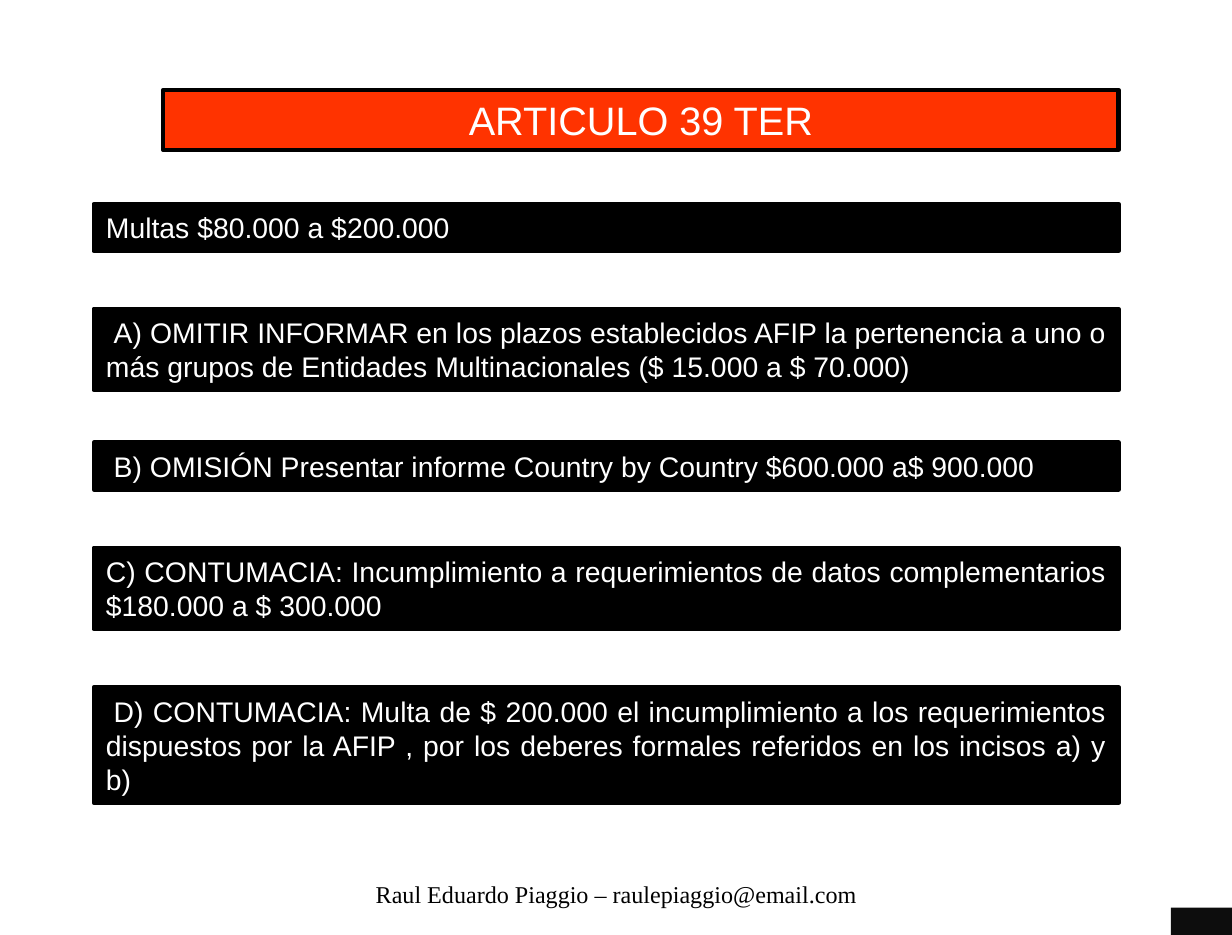
from lxml.etree import SubElement
from pptx import Presentation
from pptx.dml.color import RGBColor
from pptx.enum.shapes import MSO_SHAPE
from pptx.enum.text import MSO_ANCHOR, PP_ALIGN
from pptx.oxml.ns import qn
from pptx.util import Pt

BLACK = RGBColor(0, 0, 0)
WHITE = RGBColor(255, 255, 255)
RED = RGBColor(255, 51, 0)

TITLE = "ARTICULO 39 TER"
FOOTER = "Raul Eduardo Piaggio – raulepiaggio@email.com"
FINES = [
    (144, 1, 0, PP_ALIGN.LEFT, "Multas $80.000 a $200.000"),
    (218, 2, 5.5, PP_ALIGN.JUSTIFY,
     "A) OMITIR INFORMAR en los plazos establecidos AFIP la pertenencia a uno o más "
     "grupos de Entidades Multinacionales ($ 15.000 a $ 70.000)"),
    (312.4, 1, 5.5, PP_ALIGN.JUSTIFY,
     "B) OMISIÓN Presentar informe Country by Country $600.000 a$ 900.000"),
    (386.8, 2, 0, PP_ALIGN.JUSTIFY,
     "C) CONTUMACIA: Incumplimiento a requerimientos de datos complementarios "
     "$180.000 a $ 300.000"),
    (485.3, 3, 5.5, PP_ALIGN.JUSTIFY,
     "D) CONTUMACIA: Multa de $ 200.000 el incumplimiento a los requerimientos "
     "dispuestos por la AFIP , por los deberes formales referidos en los incisos a) y b)"),
]

RIGHT_EDGE = 789.8
FINE_LEFT = 66.2
TITLE_LEFT = 115.2
LINE_HEIGHT = 24.2
VERTICAL_PADDING = 9


def write_text(shape, text, size, font_name, color, alignment, indent=0):
    frame = shape.text_frame
    frame.text = text
    frame.word_wrap = True
    frame.margin_left = frame.margin_right = Pt(8.6)
    frame.margin_top = frame.margin_bottom = Pt(4.3)
    paragraph = frame.paragraphs[0]
    paragraph.alignment = alignment
    if indent:
        paragraph._p.get_or_add_pPr().set("indent", str(Pt(indent)))
    font = paragraph.runs[0].font
    font.name = font_name
    font.size = Pt(size)
    font.color.rgb = color


def add_filled_shape(slide, kind, left, top, width, height, color):
    shape = slide.shapes.add_shape(kind, Pt(left), Pt(top), Pt(width), Pt(height))
    shape.shadow.inherit = False
    shape.fill.solid()
    shape.fill.fore_color.rgb = color
    return shape


def add_banner(slide, left, top, height, color, text, size, alignment, indent=0):
    banner = add_filled_shape(slide, MSO_SHAPE.RECTANGLE, left, top,
                              RIGHT_EDGE - left, height, color)
    banner.line.color.rgb = BLACK
    banner.line.width = Pt(3)
    banner.text_frame.vertical_anchor = MSO_ANCHOR.MIDDLE
    write_text(banner, text, size, "Arial", WHITE, alignment, indent)


def main():
    presentation = Presentation()
    presentation.slide_width = Pt(869.8)
    presentation.slide_height = Pt(660.2)
    slide = presentation.slides.add_slide(presentation.slide_layouts[6])

    footer = slide.shapes.add_textbox(Pt(188.6), Pt(617), Pt(493.2), Pt(44))
    write_text(footer, FOOTER, 17, "Times New Roman", BLACK, PP_ALIGN.CENTER)

    button = add_filled_shape(slide, MSO_SHAPE.ACTION_BUTTON_CUSTOM,
                              826.6, 640.8, 43.9, 41, BLACK)
    button.line.fill.background()
    fill_color = button._element.spPr.find(qn("a:solidFill"))[0]
    SubElement(fill_color, qn("a:alpha"), val="95000")

    add_banner(slide, TITLE_LEFT, 63.4, 42.5, RED, TITLE, 28, PP_ALIGN.CENTER)
    for top, lines, indent, alignment, text in FINES:
        height = VERTICAL_PADDING + lines * LINE_HEIGHT
        add_banner(slide, FINE_LEFT, top, height, BLACK, text, 20, alignment, indent)

    presentation.save("out.pptx")


if __name__ == "__main__":
    main()
